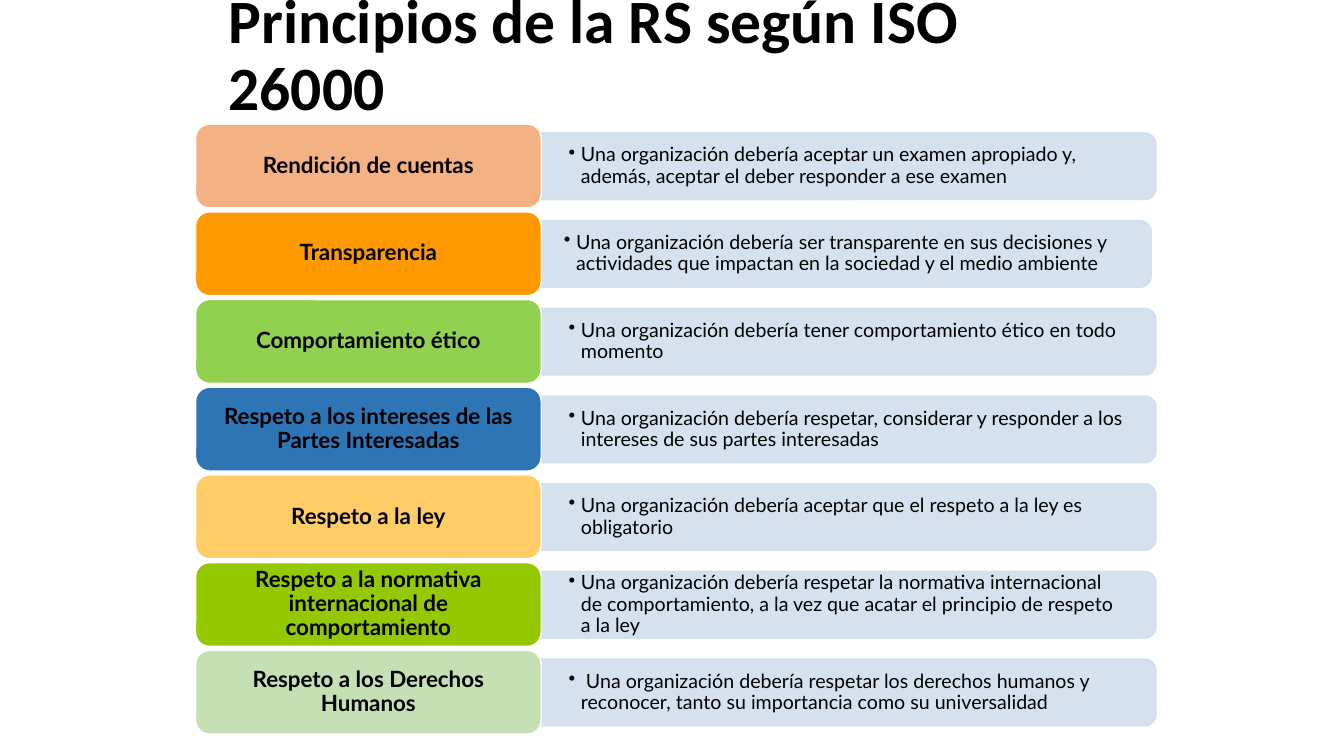
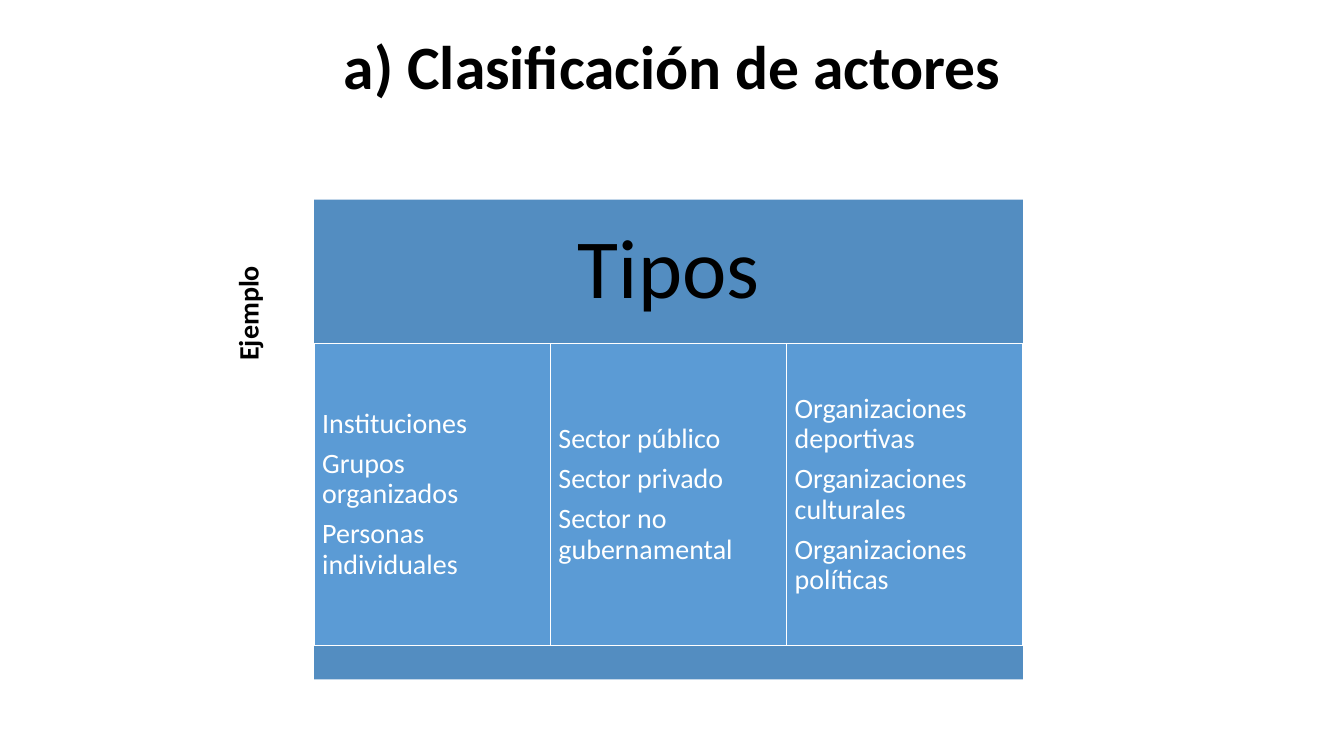
from typing import NamedTuple

from lxml import etree
from pptx import Presentation
from pptx import util as u
from pptx.dml import color
from pptx.enum import shapes, text
from pptx.oxml import ns

BLACK, WHITE = "000000", "FFFFFF"
PALE, BLUE, STEEL = "D2DEEF", "5B9BD5", "538DC1"
KIND = shapes.MSO_SHAPE
LEFT, MID = text.PP_ALIGN.LEFT, text.PP_ALIGN.CENTER

TITLE = {"name": "Calibri", "size": u.Pt(44), "bold": True}
LABEL = {"name": "Lato", "size": u.Pt(16), "bold": True}
DETAIL = {"name": "Lato", "size": u.Pt(14), "bold": False}
HEAD = {"name": "Calibri", "size": u.Pt(60), "bold": False}
ITEM = {"name": "Calibri", "size": u.Pt(20), "bold": False}
SIDE = ITEM | {"bold": True}


class Box(NamedTuple):
    """Left, top, width and height in centimetres."""
    x: float
    y: float
    w: float
    h: float

    def cm(self) -> list:
        return [u.Cm(v) for v in self]

    def turn(self) -> "Box":
        """The frame that covers this box after a quarter turn."""
        return Box(self.x + (self.w - self.h) / 2,
                   self.y + (self.h - self.w) / 2, self.h, self.w)


class Row(NamedTuple):
    label: str
    fill: str
    detail: str
    shift: float = 0


ROWS = [
    Row("Rendición de cuentas", "F4B183",
        "Una organización debería aceptar un examen apropiado y, además, "
        "aceptar el deber responder a ese examen"),
    Row("Transparencia", "FF9900",
        "Una organización debería ser transparente en sus decisiones y "
        "actividades que impactan en la sociedad y el medio ambiente", -0.12),
    Row("Comportamiento ético", "92D050",
        "Una organización debería tener comportamiento ético en todo momento"),
    Row("Respeto a los intereses de las Partes Interesadas", "2E75B6",
        "Una organización debería respetar, considerar y responder a los "
        "intereses de sus partes interesadas"),
    Row("Respeto a la ley", "FFCC66",
        "Una organización debería aceptar que el respeto a la ley es "
        "obligatorio"),
    Row("Respeto a la normativa internacional de comportamiento", "94C800",
        "Una organización debería respetar la normativa internacional de "
        "comportamiento, a la vez que acatar el principio de respeto a la ley"),
    Row("Respeto a los Derechos Humanos", "C5E0B4",
        " Una organización debería respetar los derechos humanos y reconocer, "
        "tanto su importancia como su universalidad"),
]

TYPES = [
    ["Instituciones", "Grupos organizados", "Personas individuales"],
    ["Sector público", "Sector privado", "Sector no gubernamental"],
    ["Organizaciones deportivas", "Organizaciones culturales",
     "Organizaciones políticas"],
]


def tint(hue: str) -> color.RGBColor:
    return color.RGBColor.from_string(hue)


def write(shape, lines: list[str], font: dict, hue: str = BLACK,
          align=LEFT, pad: tuple = (0.25, 0.13), after: float = 0) -> None:
    """Fill a shape with paragraphs; after is a share of the text size."""
    frame = shape.text_frame
    look = {"word_wrap": True, "vertical_anchor": text.MSO_ANCHOR.MIDDLE,
            "margin_left": u.Cm(pad[0]), "margin_right": u.Cm(pad[0]),
            "margin_top": u.Cm(pad[1]), "margin_bottom": u.Cm(pad[1])}
    for key, val in look.items():
        setattr(frame, key, val)
    frame.text = "\n".join(lines)
    for par in frame.paragraphs:
        form = {"alignment": align, "line_spacing": 0.9,
                "space_after": u.Pt(after * font["size"].pt)}
        for key, val in form.items():
            setattr(par, key, val)
        run = par.runs[0]
        for key, val in font.items():
            setattr(run.font, key, val)
        run.font.color.rgb = tint(hue)


def block(slide, kind, box: Box, fill: str, line: str | None = None):
    shape = slide.shapes.add_shape(kind, *box.cm())
    shape.shadow.inherit = False
    shape.fill.solid()
    shape.fill.fore_color.rgb = tint(fill)
    if line:
        shape.line.color.rgb = tint(line)
        shape.line.width = u.Pt(1)
    else:
        shape.line.fill.background()
    return shape


def note(slide, box: Box, lines: list[str], font: dict, **form):
    shape = slide.shapes.add_textbox(*box.cm())
    write(shape, lines, font, **form)
    return shape


def fade(shape, share: int) -> None:
    """Set the opacity of fill and line, in percent."""
    for hue in shape.element.spPr.iter(ns.qn("a:srgbClr")):
        etree.SubElement(hue, ns.qn("a:alpha")).set("val", str(share * 1000))


def bullet(shape, hang: float) -> None:
    for par in shape.text_frame.paragraphs:
        prop = par._p.get_or_add_pPr()
        prop.set("marL", str(u.Cm(hang)))
        prop.set("indent", str(-u.Cm(hang)))
        etree.SubElement(prop, ns.qn("a:buChar")).set("char", "•")


def row(slide, item: Row, top: float) -> None:
    tag = Box(4.93, top, 8.71, 2.11)
    left = tag.x + tag.w + item.shift
    band = Box(left, top + 0.22, 15.49, 1.68)
    bar = block(slide, KIND.ROUND_2_SAME_RECTANGLE, band.turn(), PALE, PALE)
    bar.rotation = 90
    fade(bar, 90)
    body = note(slide, Box(left, top + 0.3, 15.42, 1.52), [item.detail],
                DETAIL, pad=(0.69, 0.36), after=0.15)
    bullet(body, 0.31)
    label = block(slide, KIND.ROUNDED_RECTANGLE, tag, item.fill, WHITE)
    write(label, [item.label], LABEL, align=MID, pad=(0.28, 0.18), after=0.35)


def rules(slide) -> None:
    note(slide, Box(5.51, 0.36, 22.86, 2.16),
         ["Principios de la RS según ISO 26000"], TITLE)
    for i, item in enumerate(ROWS):
        row(slide, item, 3.13 + i * 2.21)


def actors(slide) -> None:
    note(slide, Box(0, 0.97, 33.91, 1.55), ["a) Clasificación de actores"],
         TITLE, align=MID)
    x, y, wide = 7.92, 5.03, 17.86
    head, body, foot = 3.63, 7.62, 0.84
    top = block(slide, KIND.RECTANGLE, Box(x, y, wide, head), STEEL)
    write(top, ["Tipos"], HEAD, align=MID, pad=(0.64, 0.64), after=0.35)
    y += head
    step = wide / len(TYPES)
    for i, names in enumerate(TYPES):
        cell = block(slide, KIND.RECTANGLE, Box(x + i * step, y, step, body),
                     BLUE, WHITE)
        write(cell, names, ITEM, WHITE, pad=(0.2, 0.2), after=0.35)
    block(slide, KIND.RECTANGLE, Box(x, y + body, wide, foot), STEEL)
    side = note(slide, Box(3.89, 6.38, 4.8, 1.12), ["Ejemplo"], SIDE)
    side.rotation = 270


def main() -> None:
    deck = Presentation()
    deck.slide_width, deck.slide_height = u.Cm(33.87), u.Cm(19.05)
    for draw in (rules, actors):
        draw(deck.slides.add_slide(deck.slide_layouts[6]))
    deck.save("out.pptx")


if __name__ == "__main__":
    main()
